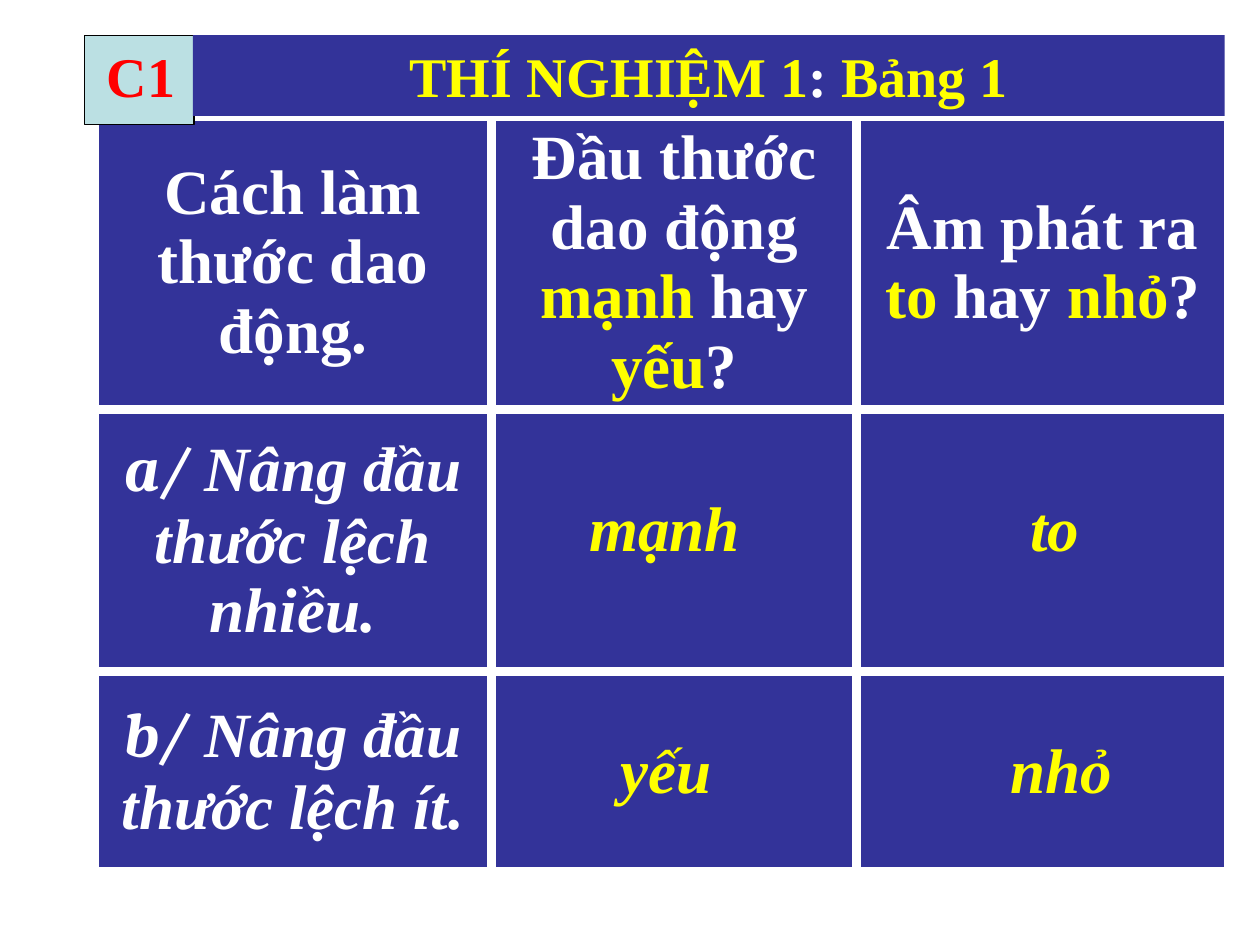
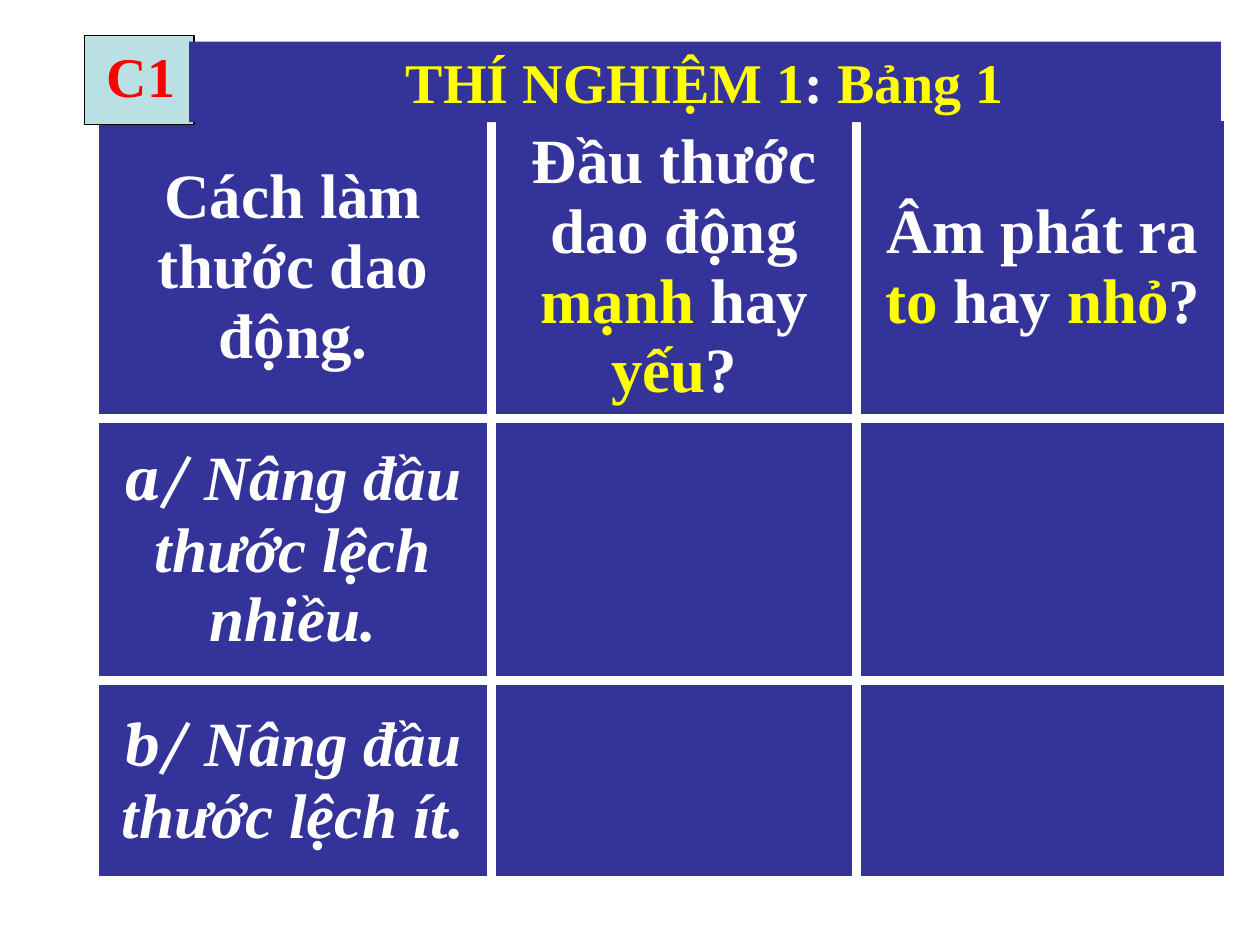
"""Builds two slides of a sound experiment table, with and without the answers."""
from dataclasses import dataclass

from lxml import etree
from pptx import Presentation
from pptx.dml.color import RGBColor
from pptx.enum import shapes, text
from pptx.oxml import ns
from pptx.util import Inches, Pt


@dataclass(frozen=True)
class Theme:
    panel: str = "333399"
    badge: str = "BBE0E3"
    outline: str = "000000"
    white: str = "FFFFFF"
    yellow: str = "FFFF00"
    red: str = "FF0000"
    font: str = "Times New Roman"
    label_font: str = "Cambria"
    title_size: int = 32
    body_size: int = 36
    border: int = 6


THEME = Theme()

STYLES = {
    "plain": (THEME.white, THEME.font, False),
    "key": (THEME.yellow, THEME.font, False),
    "code": (THEME.red, THEME.font, False),
    "label": (THEME.white, THEME.label_font, True),
    "step": (THEME.white, THEME.font, True),
    "answer": (THEME.yellow, THEME.font, True),
}

CODE = [("C1", "code")]
TITLE = [("THÍ NGHIỆM 1", "key"), (": ", "plain"), ("Bảng 1", "key")]
ROWS = [
    [
        [("Cách làm thước dao động.", "plain")],
        [("Đầu thước dao động ", "plain"), ("mạnh", "key"), (" hay ", "plain"),
         ("yếu", "key"), ("?", "plain")],
        [("Âm phát ra ", "plain"), ("to", "key"), (" hay ", "plain"),
         ("nhỏ", "key"), ("?", "plain")],
    ],
    [[("a/ ", "label"), ("Nâng đầu thước lệch nhiều.", "step")], [], []],
    [[("b/ ", "label"), ("Nâng đầu thước lệch ít.", "step")], [], []],
]
ANSWERS = [
    ("mạnh", 4.58, 3.83, 1.41),
    ("to", 8.08, 3.83, 0.59),
    ("nhỏ", 7.92, 5.75, 1.02),
    ("yếu", 4.83, 5.75, 0.93),
]
SLIDES = [
    {"title_at": (1.53, 0.28), "answers": ANSWERS},
    {"title_at": (1.5, 0.33), "answers": []},
]

GRID_BOX = (0.75, 0.92, 9, 6.17)
COLUMN_WIDTHS = (3.15, 2.9, 2.95)
ROW_HEIGHTS = (2.33, 2.08, 1.59)
TITLE_SIZE = (8.19, 0.64)
BADGE_BOX = (0.67, 0.28, 0.87, 0.71)
CODE_BOX = (0.75, 0.28, 0.87, 0.63)
ANSWER_HEIGHT = 0.71


def inches(*lengths):
    return [Inches(length) for length in lengths]


def write(frame, pieces, size, centred=False):
    paragraph = frame.paragraphs[0]
    paragraph.alignment = text.PP_ALIGN.CENTER if centred else text.PP_ALIGN.LEFT
    for words, style in pieces:
        run = paragraph.add_run()
        run.text = words
        colour, font, italic = STYLES[style]
        run.font.name, run.font.size = font, Pt(size)
        run.font.bold, run.font.italic = True, italic
        run.font.color.rgb = RGBColor.from_string(colour)


def add_rectangle(slide, box, fill, outline=None):
    rectangle = slide.shapes.add_shape(shapes.MSO_SHAPE.RECTANGLE, *inches(*box))
    rectangle.shadow.inherit = False
    rectangle.fill.solid()
    rectangle.fill.fore_color.rgb = RGBColor.from_string(fill)
    if outline:
        rectangle.line.color.rgb = RGBColor.from_string(outline)
        rectangle.line.width = Pt(0.75)
    else:
        rectangle.line.fill.background()
    return rectangle


def add_label(slide, box, pieces, size, wrap):
    frame = slide.shapes.add_textbox(*inches(*box)).text_frame
    frame.word_wrap = wrap
    frame.auto_size = text.MSO_AUTO_SIZE.SHAPE_TO_FIT_TEXT
    write(frame, pieces, size)


def paint_cell(cell):
    properties = cell._tc.get_or_add_tcPr()
    for side in ("lnL", "lnR", "lnT", "lnB"):
        edge = etree.SubElement(properties, ns.qn(f"a:{side}"), w=str(Pt(THEME.border)))
        paint = etree.SubElement(edge, ns.qn("a:solidFill"))
        etree.SubElement(paint, ns.qn("a:srgbClr"), val=THEME.white)
    cell.fill.solid()
    cell.fill.fore_color.rgb = RGBColor.from_string(THEME.panel)
    cell.vertical_anchor = text.MSO_ANCHOR.MIDDLE
    cell.margin_top = cell.margin_bottom = 0


def add_grid(slide):
    holder = slide.shapes.add_table(len(ROWS), len(COLUMN_WIDTHS), *inches(*GRID_BOX))
    grid = holder.table
    for column, width in zip(grid.columns, COLUMN_WIDTHS):
        column.width = Inches(width)
    for row, height, contents in zip(grid.rows, ROW_HEIGHTS, ROWS):
        row.height = Inches(height)
        for cell, pieces in zip(row.cells, contents):
            paint_cell(cell)
            write(cell.text_frame, pieces, THEME.body_size, centred=True)
    holder.height = Inches(GRID_BOX[3])


def add_heading(slide, title_at):
    add_rectangle(slide, BADGE_BOX, THEME.badge, THEME.outline)
    add_label(slide, CODE_BOX, CODE, THEME.title_size, wrap=True)
    band = add_rectangle(slide, (*title_at, *TITLE_SIZE), THEME.panel)
    band.text_frame.word_wrap = True
    band.text_frame.auto_size = text.MSO_AUTO_SIZE.SHAPE_TO_FIT_TEXT
    band.text_frame.vertical_anchor = text.MSO_ANCHOR.TOP
    write(band.text_frame, TITLE, THEME.title_size, centred=True)


def main():
    deck = Presentation()
    deck.slide_width, deck.slide_height = inches(10, 7.5)
    for content in SLIDES:
        slide = deck.slides.add_slide(deck.slide_layouts[6])
        add_grid(slide)
        for word, left, top, width in content["answers"]:
            add_label(slide, (left, top, width, ANSWER_HEIGHT),
                      [(word, "answer")], THEME.body_size, wrap=False)
        add_heading(slide, content["title_at"])
    deck.save("out.pptx")


if __name__ == "__main__":
    main()
